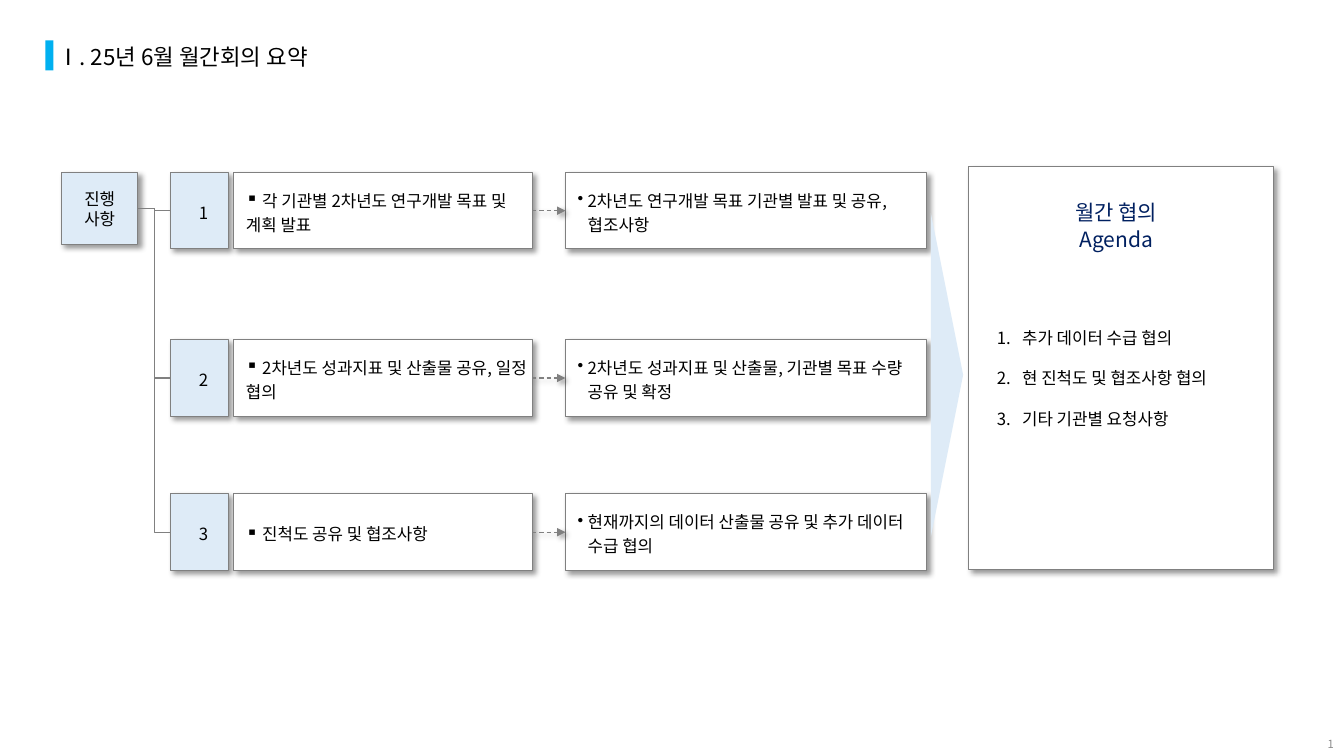
from dataclasses import dataclass

from lxml import etree
from pptx import Presentation
from pptx import util as u
from pptx.dml.color import RGBColor
from pptx.enum import dml, shapes, text
from pptx.oxml import ns

FONT = "Noto Sans CJK KR"
COLORS = {"accent": "00B0F0", "pale": "DEEBF7", "white": "FFFFFF", "gray": "808080",
          "black": "000000", "navy": "002060", "page": "8C8C8C"}
TOP, LEFT, RIGHT = 0, 1, 3
CENTER = text.PP_ALIGN.CENTER
ROW_HEIGHT = 54.72


@dataclass(frozen=True)
class Box:
    left: float
    top: float
    width: float
    height: float

    def lengths(self) -> tuple:
        return tuple(u.Pt(v) for v in (self.left, self.top, self.width, self.height))


@dataclass(frozen=True)
class Step:
    top: float
    task: str
    result: str


STEPS = (
    Step(123.12, " 각 기관별 2차년도 연구개발 목표 및 계획 발표",
         "2차년도 연구개발 목표 기관별 발표 및 공유, 협조사항"),
    Step(242.64, " 2차년도 성과지표 및 산출물 공유, 일정 협의",
         "2차년도 성과지표 및 산출물, 기관별 목표 수량 공유 및 확정"),
    Step(352.8, " 진척도 공유 및 협조사항",
         "현재까지의 데이터 산출물 공유 및 추가 데이터 수급 협의"),
)
AGENDA = ("추가 데이터 수급 협의", "현 진척도 및 협조사항 협의", "기타 기관별 요청사항")


def rgb(name: str) -> RGBColor:
    return RGBColor.from_string(COLORS[name])


def place(sp, box: Box) -> None:
    sp.left, sp.top, sp.width, sp.height = box.lengths()


def add_run(p, content: str, size: float = 12, color: str = "black") -> None:
    r = p.add_run()
    r.text = content
    r.font.size = u.Pt(size)
    r.font.name = FONT
    r.font.color.rgb = rgb(color)
    etree.SubElement(r.font._element, ns.qn("a:ea"), typeface=FONT)


def set_bullet(p, tag: str, indent: float = 0, **attrs: str) -> None:
    """Give the paragraph a bullet or number with a hanging indent in points."""
    p_pr = p._p.get_or_add_pPr()
    p_pr.set("marL", str(u.Pt(indent)))
    p_pr.set("indent", str(-u.Pt(indent)))
    etree.SubElement(p_pr, ns.qn(tag), **attrs)


def add_shadow(effects) -> None:
    """Put a soft shadow falling to the lower right into an a:effectLst."""
    outer = etree.SubElement(effects, ns.qn("a:outerShdw"), blurRad=str(u.Pt(4)),
                             dist=str(u.Pt(3)), dir="2700000", algn="tl", rotWithShape="0")
    color = etree.SubElement(outer, ns.qn("a:srgbClr"), val=COLORS["black"])
    etree.SubElement(color, ns.qn("a:alpha"), val="40000")


def set_frame(sp, inset: float, wrap: bool = True):
    tf = sp.text_frame
    tf.word_wrap = wrap
    tf.vertical_anchor = text.MSO_ANCHOR.MIDDLE
    tf.margin_left = u.Pt(inset)
    tf.margin_top = tf.margin_right = tf.margin_bottom = 0
    return tf


def style_card(sp, fill: str) -> None:
    sp.fill.solid()
    sp.fill.fore_color.rgb = rgb(fill)
    sp.line.color.rgb = rgb("gray")
    sp.line.width = u.Pt(0.75)
    sp.shadow.inherit = False
    add_shadow(sp._element.spPr.find(ns.qn("a:effectLst")))


def add_card(s, box: Box, fill: str, lines: tuple, inset: float = 0, align=text.PP_ALIGN.LEFT,
             spacing: float = 1.2):
    sp = s.shapes.add_shape(shapes.MSO_SHAPE.RECTANGLE, *box.lengths())
    style_card(sp, fill)
    tf = set_frame(sp, inset)
    for i, line in enumerate(lines):
        p = tf.add_paragraph() if i else tf.paragraphs[0]
        p.alignment = align
        p.line_spacing = spacing
        add_run(p, line)
    return sp


def add_plain(s, kind, box: Box, fill: str):
    sp = s.shapes.add_shape(kind, *box.lengths())
    sp.fill.solid()
    sp.fill.fore_color.rgb = rgb(fill)
    sp.line.fill.background()
    sp.shadow.inherit = False
    return sp


def join(s, start, end, kind, arrow: bool = False) -> None:
    """Link the right side of one card to the left side of another."""
    cn = s.shapes.add_connector(kind, 0, 0, 0, 0)
    cn.begin_connect(start, RIGHT)
    cn.end_connect(end, LEFT)
    cn.line.color.rgb = rgb("gray")
    cn.line.width = u.Pt(0.75)
    if arrow:
        cn.line.dash_style = dml.MSO_LINE.DASH
        etree.SubElement(cn._element.spPr.find(ns.qn("a:ln")), ns.qn("a:tailEnd"), type="triangle")
    effects = etree.SubElement(cn._element.spPr, ns.qn("a:effectLst"))
    if arrow:
        add_shadow(effects)


def add_title(s) -> None:
    sp = s.shapes.title
    place(sp, Box(33.84, 27.36, 214.56, 26.64))
    tf = sp.text_frame
    tf.word_wrap = False
    tf.auto_size = text.MSO_AUTO_SIZE.SHAPE_TO_FIT_TEXT
    tf.vertical_anchor = text.MSO_ANCHOR.TOP
    p = tf.paragraphs[0]
    p.alignment = text.PP_ALIGN.LEFT
    add_run(p, "Ⅰ. 25년 6월 월간회의 요약", 16)
    add_plain(s, shapes.MSO_SHAPE.RECTANGLE, Box(32.4, 28.8, 5.76, 21.6), "accent")


def add_page_number(s) -> None:
    sp = s.shapes.add_textbox(*Box(889.2, 522.72, 70.56, 17.28).lengths())
    tf = sp.text_frame
    tf.word_wrap = True
    tf.vertical_anchor = text.MSO_ANCHOR.MIDDLE
    p = tf.paragraphs[0]
    p.alignment = text.PP_ALIGN.RIGHT
    add_run(p, "1", 8, "page")


def add_steps(s) -> None:
    topic = add_card(s, Box(43.92, 123.12, 54.72, 51.84), "pale", ("진행", "사항"),
                     align=CENTER, spacing=1.0)
    for i, step in enumerate(STEPS, 1):
        number = add_card(s, Box(121.68, step.top, 41.76, ROW_HEIGHT), "pale", (str(i),),
                          5.76, CENTER)
        task = add_card(s, Box(167.04, step.top, 213.12, ROW_HEIGHT), "white", (step.task,), 8.64)
        set_bullet(task.text_frame.paragraphs[0], "a:buChar", char="▪")
        result = add_card(s, Box(403.92, step.top, 257.76, ROW_HEIGHT), "white",
                          (step.result,), 8.64)
        set_bullet(result.text_frame.paragraphs[0], "a:buChar", 7.2, char="•")
        join(s, topic, number, shapes.MSO_CONNECTOR.ELBOW)
        join(s, task, result, shapes.MSO_CONNECTOR.STRAIGHT, arrow=True)


def add_agenda(s) -> None:
    sp = s.placeholders[1]
    place(sp, Box(691.92, 118.8, 217.44, 288))
    style_card(sp, "white")
    tf = set_frame(sp, 20.16)
    tf.auto_size = text.MSO_AUTO_SIZE.NONE
    for i, item in enumerate(AGENDA):
        p = tf.add_paragraph() if i else tf.paragraphs[0]
        p.line_spacing = 2.0
        p.space_before = u.Pt(0)
        set_bullet(p, "a:buAutoNum", 18, type="arabicPeriod")
        add_run(p, item)

    heading = s.shapes.add_textbox(*Box(739.44, 138.96, 115.92, 43.2).lengths())
    tf = set_frame(heading, 1.44, wrap=False)
    tf.margin_top = tf.margin_right = tf.margin_bottom = u.Pt(1.44)
    tf.vertical_anchor = text.MSO_ANCHOR.TOP
    p = tf.paragraphs[0]
    p.alignment = CENTER
    p.line_spacing = 1.1
    add_run(p, "월간 협의", 15, "navy")
    p.add_line_break()
    add_run(p, "Agenda", 15, "navy")
    funnel = add_plain(s, shapes.MSO_SHAPE.ISOSCELES_TRIANGLE,
                       Box(560.88, 256.32, 231.12, 23.04), "pale")
    funnel.rotation = 90


def main() -> None:
    prs = Presentation()
    prs.slide_width, prs.slide_height = u.Pt(960), u.Pt(540)
    s = prs.slides.add_slide(prs.slide_layouts[1])
    add_title(s)
    add_page_number(s)
    add_steps(s)
    add_agenda(s)
    prs.save("out.pptx")


if __name__ == "__main__":
    main()
